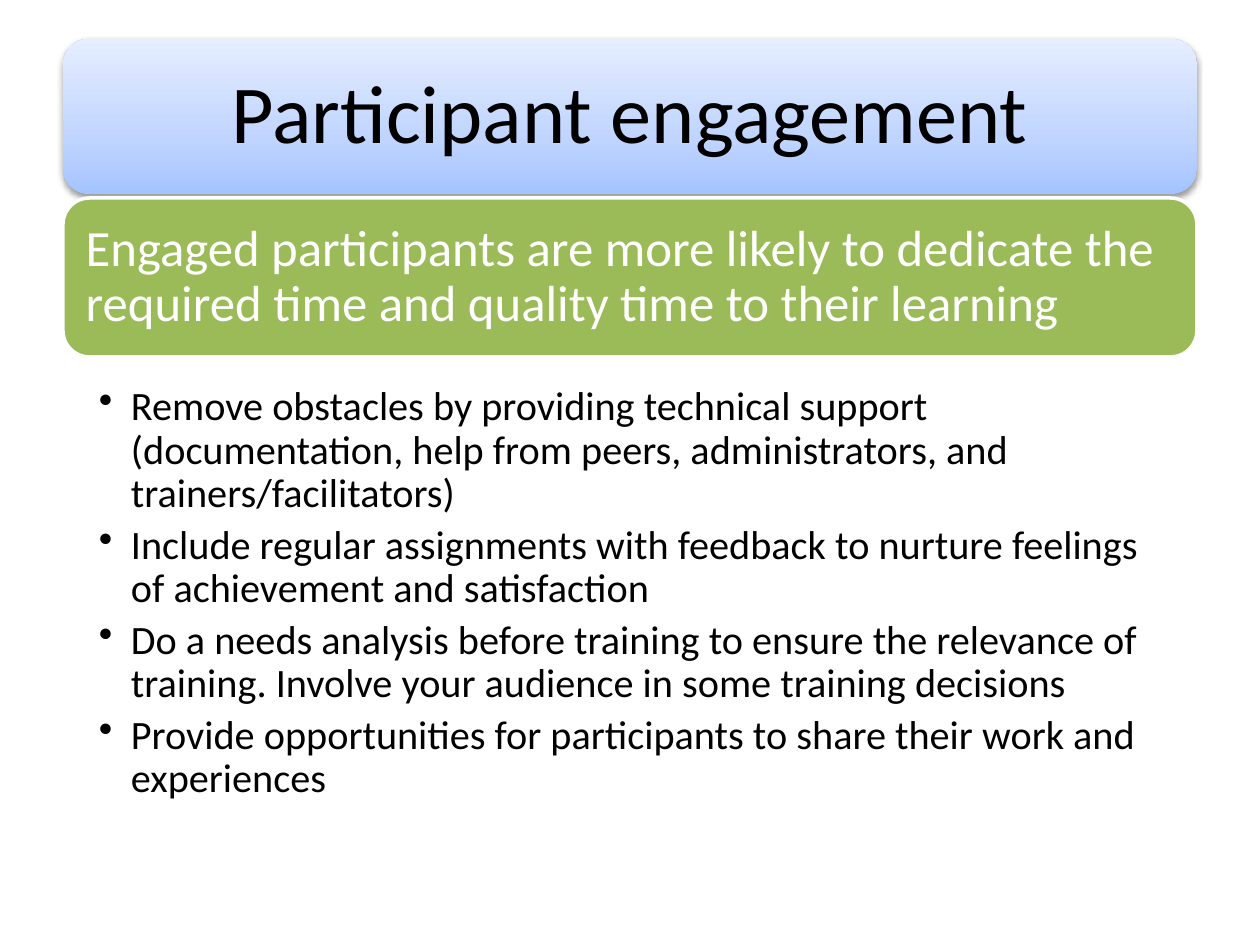
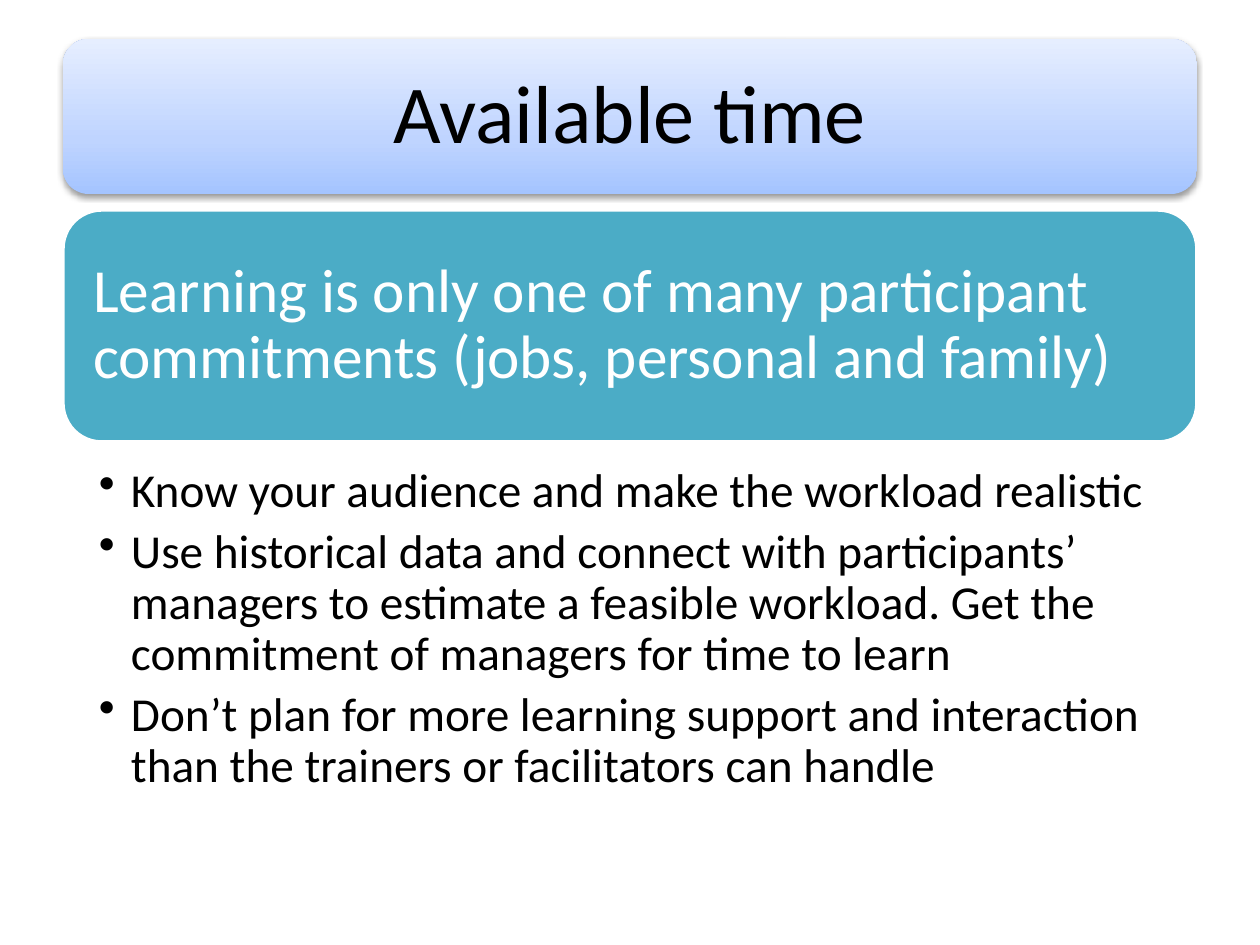
from lxml import etree
from pptx import Presentation
from pptx import util as u
from pptx.dml.color import RGBColor
from pptx.enum import shapes, text
from pptx.oxml.ns import qn

COLOURS = {
    "ink": "000000",
    "paper": "FFFFFF",
    "green": "9BBB59",
    "teal": "4BACC6",
    "shadow": "000000",
}
TITLE_GRADIENT = [(0, "A4C4FF"), (35, "BFD4FF"), (100, "E6EEFF")]
FONT = "Calibri"

SLIDES = [
    {
        "title": "Participant engagement",
        "message": "Engaged participants are more likely to dedicate the required time "
                   "and quality time to their learning",
        "colour": "green",
        "message_top": 198, "message_height": 159, "message_size": 29, "message_inset": 15,
        "advice": [
            "Remove obstacles by providing technical support (documentation, help from "
            "peers, administrators, and trainers/facilitators)",
            "Include regular assignments with feedback to nurture feelings of achievement "
            "and satisfaction",
            "Do a needs analysis before training to ensure the relevance of training. "
            "Involve your audience in some training decisions",
            "Provide opportunities for participants to share their work and experiences",
        ],
        "advice_top": 381, "advice_height": 438, "advice_size": 23,
        "advice_insets": (36, 5, 29, 5),
    },
    {
        "title": "Available time",
        "message": "Learning is only one of many participant commitments "
                   "(jobs, personal and family)",
        "colour": "teal",
        "message_top": 210, "message_height": 232, "message_size": 35, "message_inset": 19,
        "advice": [
            "Know your audience and make the workload realistic",
            "Use historical data and connect with participants’ managers to estimate a "
            "feasible workload. Get the commitment of managers for time to learn",
            "Don’t plan for more learning support and interaction than the trainers or "
            "facilitators can handle",
        ],
        "advice_top": 461, "advice_height": 349, "advice_size": 27,
        "advice_insets": (36, 6, 34, 6),
    },
]

SLIDE_WIDTH, SLIDE_HEIGHT = 1260, 945
MARGIN = 63
WIDTH = SLIDE_WIDTH - 2 * MARGIN
TITLE_TOP, TITLE_HEIGHT, TITLE_SIZE, TITLE_INSET = 39, 155, 47, 25
BULLET_INDENT = 32


def px(length):
    return u.Emu(round(length * 914400 / 126))


def rgb(name):
    return RGBColor.from_string(COLOURS[name])


def child(parent, tag, **attributes):
    return etree.SubElement(parent, qn(tag), {k: str(v) for k, v in attributes.items()})


def write(frame, lines, size, colour, insets, anchor, align, gap, bulleted=False):
    frame.word_wrap = True
    frame.auto_size = text.MSO_AUTO_SIZE.NONE
    frame.vertical_anchor = anchor
    frame.margin_left, frame.margin_top, frame.margin_right, frame.margin_bottom = map(px, insets)
    for index, line in enumerate(lines):
        paragraph = frame.paragraphs[0] if index == 0 else frame.add_paragraph()
        if bulleted:
            paragraph.level = 1
            properties = paragraph._p.get_or_add_pPr()
            properties.set("marL", str(px(BULLET_INDENT)))
            properties.set("indent", str(-px(BULLET_INDENT)))
            child(properties, "a:buChar", char="•")
        paragraph.alignment = align
        paragraph.line_spacing = 0.9
        paragraph.space_before = u.Pt(0)
        paragraph.space_after = u.Pt(size * gap)
        run = paragraph.add_run()
        run.text = line
        run.font.name = FONT
        run.font.size = u.Pt(size)
        run.font.color.rgb = rgb(colour)


def add_band(slide, top, height, line, size, colour, inset, align):
    band = slide.shapes.add_shape(shapes.MSO_SHAPE.ROUNDED_RECTANGLE,
                                  px(MARGIN), px(top), px(WIDTH), px(height))
    band.shadow.inherit = False
    write(band.text_frame, [line], size, colour, [inset] * 4,
          text.MSO_ANCHOR.MIDDLE, align, 0.35)
    return band


def add_title(slide, title):
    band = add_band(slide, TITLE_TOP, TITLE_HEIGHT, title, TITLE_SIZE, "ink",
                    TITLE_INSET, text.PP_ALIGN.CENTER)
    band.line.fill.background()
    properties = band._element.spPr
    gradient = etree.Element(qn("a:gradFill"), rotWithShape="1")
    stops = child(gradient, "a:gsLst")
    for position, colour in TITLE_GRADIENT:
        child(child(stops, "a:gs", pos=position * 1000), "a:srgbClr", val=colour)
    child(gradient, "a:lin", ang=270 * 60000, scaled=0)
    properties.find(qn("a:prstGeom")).addnext(gradient)
    shadow = child(properties.find(qn("a:effectLst")), "a:outerShdw",
                   blurRad=u.Pt(3.1), dist=u.Pt(1.6), dir=90 * 60000, rotWithShape=0)
    child(child(shadow, "a:srgbClr", val=COLOURS["shadow"]), "a:alpha", val=38000)


def add_message(slide, topic):
    band = add_band(slide, topic["message_top"], topic["message_height"], topic["message"],
                    topic["message_size"], "paper", topic["message_inset"],
                    text.PP_ALIGN.LEFT)
    band.fill.solid()
    band.fill.fore_color.rgb = rgb(topic["colour"])
    band.line.color.rgb = rgb("paper")
    band.line.width = u.Pt(2)


def add_advice(slide, topic):
    box = slide.shapes.add_textbox(px(MARGIN), px(topic["advice_top"]),
                                   px(WIDTH), px(topic["advice_height"]))
    write(box.text_frame, topic["advice"], topic["advice_size"], "ink",
          topic["advice_insets"], text.MSO_ANCHOR.TOP, text.PP_ALIGN.LEFT, 0.2, bulleted=True)


def main():
    deck = Presentation()
    deck.slide_width, deck.slide_height = px(SLIDE_WIDTH), px(SLIDE_HEIGHT)
    for topic in SLIDES:
        slide = deck.slides.add_slide(deck.slide_layouts[6])
        add_title(slide, topic["title"])
        add_message(slide, topic)
        add_advice(slide, topic)
    deck.save("out.pptx")


if __name__ == "__main__":
    main()
